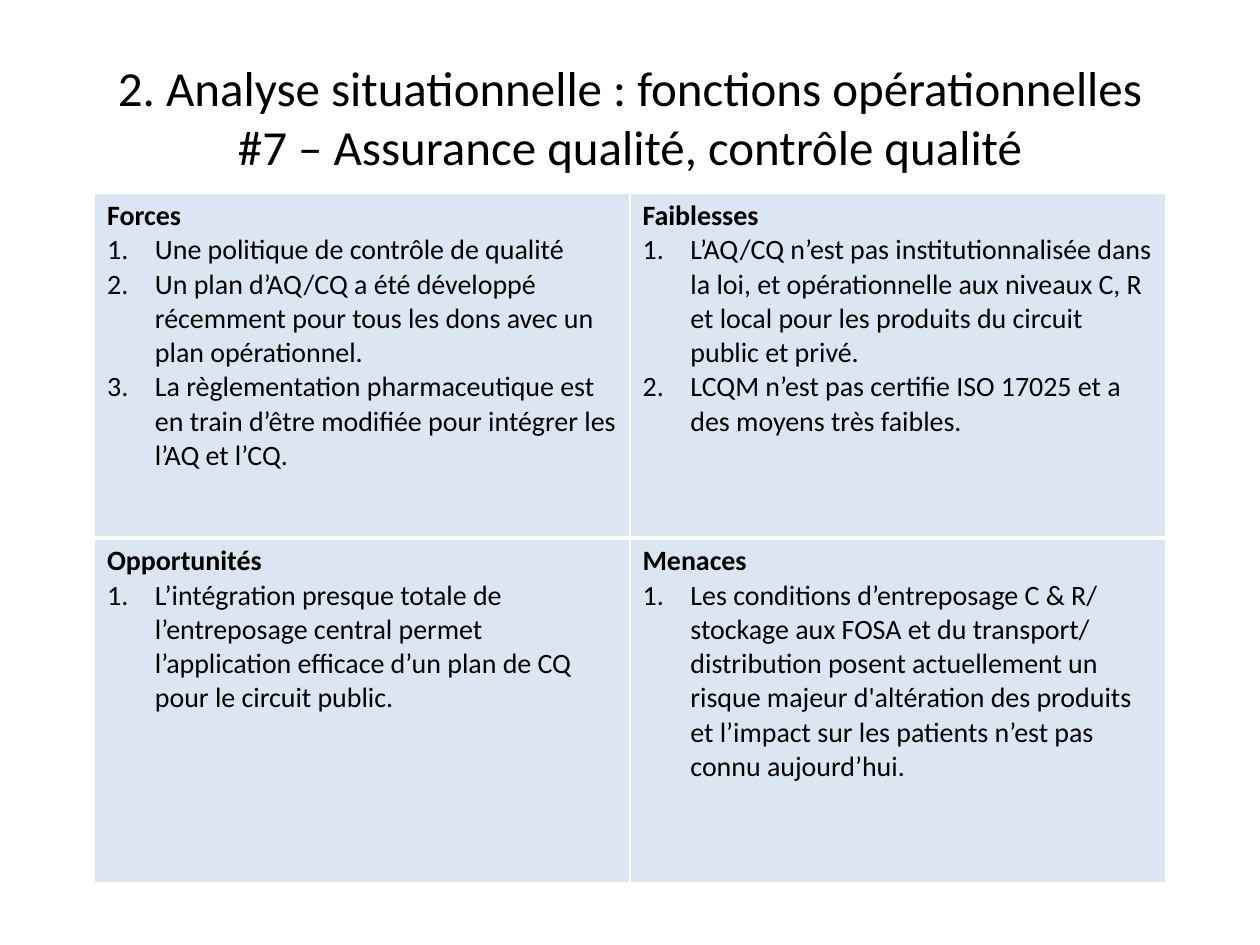
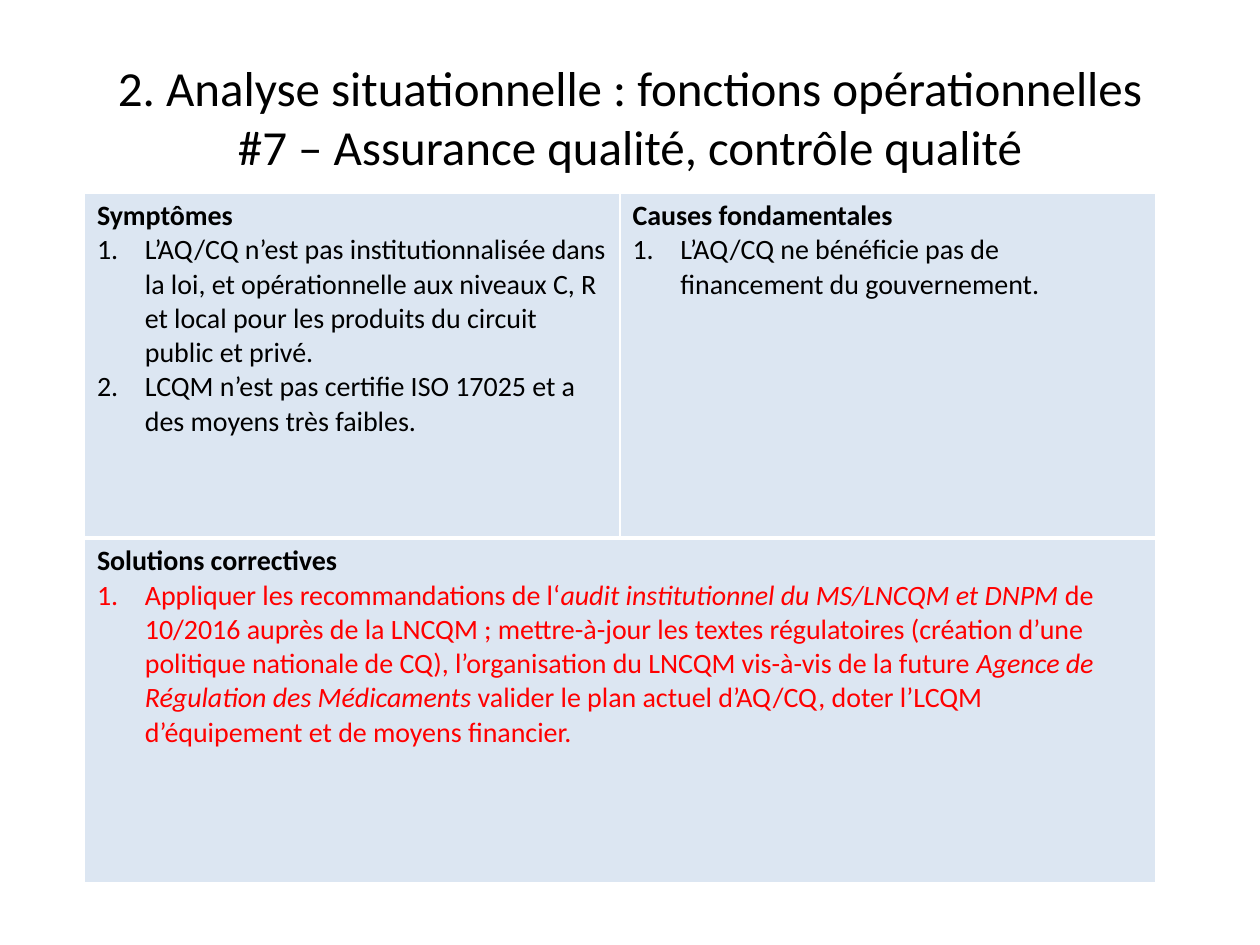
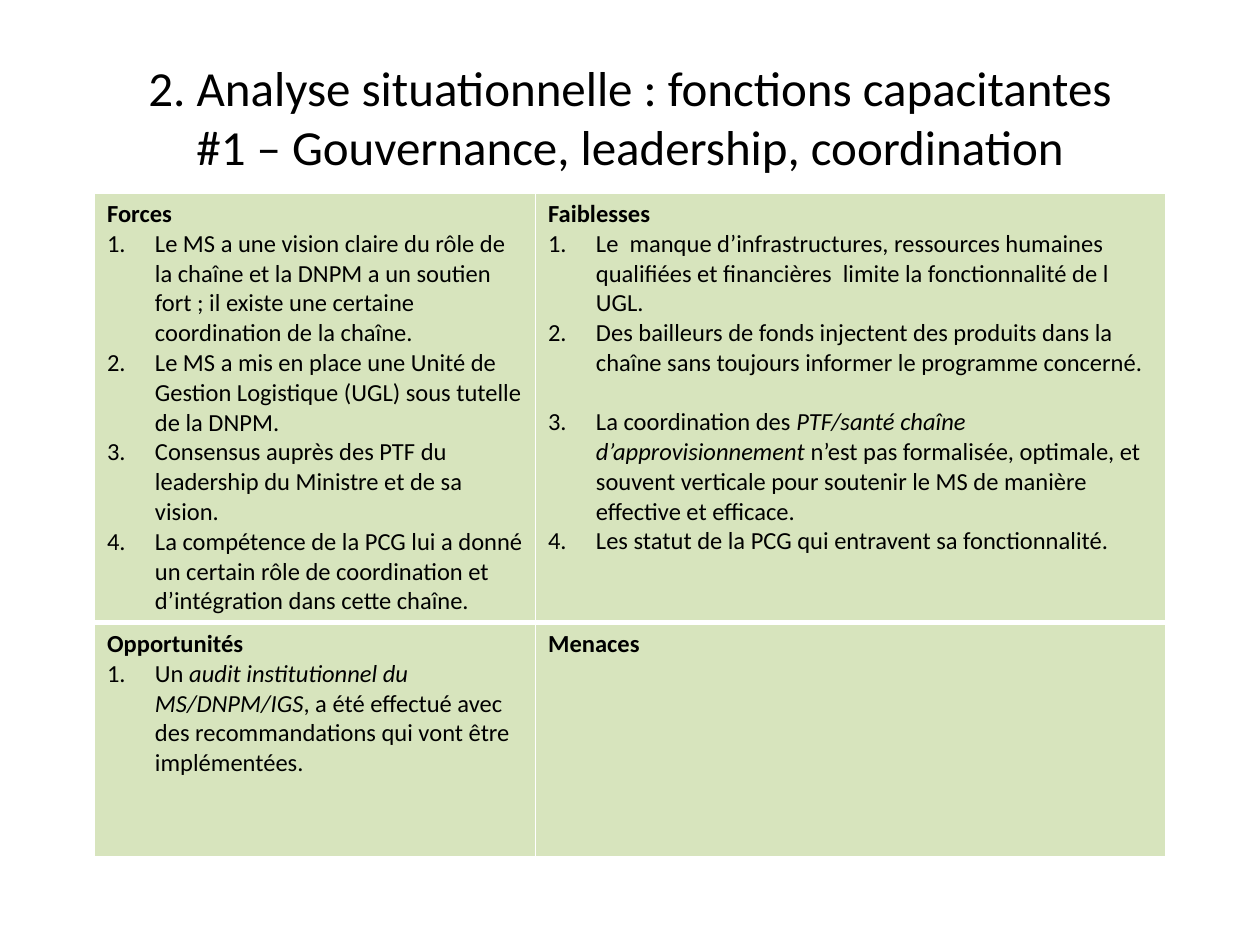
from dataclasses import dataclass

from lxml.etree import SubElement
from pptx import Presentation
from pptx.dml.color import RGBColor as RGB
from pptx.enum.text import MSO_ANCHOR as ANCHOR, MSO_AUTO_SIZE as AUTO, PP_ALIGN as ALIGN
from pptx.oxml.ns import qn
from pptx.util import Inches, Pt


@dataclass(frozen=True)
class Theme:
    """Colours, font and sizes shared by the slides."""
    font: str = "Calibri"
    ink: str = "000000"
    alert: str = "FF0000"
    line: str = "FFFFFF"
    blue: str = "DCE6F2"
    green: str = "D7E4BD"
    title: int = 28
    body: int = 16
    small: int = 14
    thin: int = 1
    thick: int = 3
    indent: float = 0.38


@dataclass(frozen=True)
class Quadrant:
    """A heading with its numbered points; gap_at is the point set apart."""
    heading: str
    points: tuple = ()
    color: str = Theme.ink
    gap_at: int = -1


THEME = Theme()
TITLE_BOX = (0.5, 0.3, 9, 1.25)
QUALITY_TITLE = ("2. Analyse situationnelle : fonctions opérationnelles\n"
                 "#7 – Assurance qualité, contrôle qualité")
GOVERNANCE_TITLE = ("2. Analyse situationnelle : fonctions capacitantes\n"
                    "#1 – Gouvernance, leadership, coordination")
QUALITY_GAPS = (
    "L’AQ/CQ n’est pas institutionnalisée dans la loi, et opérationnelle aux niveaux C, R "
    "et local pour les produits du circuit public et privé.",
    "LCQM n’est pas certifie ISO 17025 et a des moyens très faibles.",
)
QUALITY_SWOT = [
    [Quadrant("Forces", (
        "Une politique de contrôle de qualité",
        "Un plan d’AQ/CQ a été développé récemment pour tous les dons avec un plan opérationnel.",
        "La règlementation pharmaceutique est en train d’être modifiée pour intégrer les "
        "l’AQ et l’CQ.")),
     Quadrant("Faiblesses", QUALITY_GAPS)],
    [Quadrant("Opportunités", (
        "L’intégration presque totale de l’entreposage central permet l’application efficace "
        "d’un plan de CQ pour le circuit public.",)),
     Quadrant("Menaces", (
         "Les conditions d’entreposage C & R/ stockage aux FOSA et du transport/ distribution "
         "posent actuellement un risque majeur d'altération des produits et l’impact sur les "
         "patients n’est pas connu aujourd’hui.",))],
]
QUALITY_CAUSES = [
    [Quadrant("Symptômes", QUALITY_GAPS),
     Quadrant("Causes fondamentales", (
         "L’AQ/CQ ne bénéficie pas de financement du gouvernement.",))],
    [Quadrant("Solutions correctives", (
        "Appliquer les recommandations de l‘*audit institutionnel du MS/LNCQM et DNPM* de "
        "10/2016 auprès de la LNCQM ; mettre-à-jour les textes régulatoires (création d’une "
        "politique nationale de CQ), l’organisation du LNCQM vis-à-vis de la future *Agence de "
        "Régulation des Médicaments* valider le plan actuel d’AQ/CQ, doter l’LCQM "
        "d’équipement et de moyens financier.",), color=THEME.alert)],
]
GOVERNANCE_SWOT = [
    [Quadrant("Forces", (
        "Le MS a une vision claire du rôle de la chaîne et la DNPM a un soutien fort ; "
        "il existe une certaine coordination de la chaîne.",
        "Le MS a mis en place une Unité de Gestion Logistique (UGL) sous tutelle de la DNPM.",
        "Consensus auprès des PTF du leadership du Ministre et de sa vision.",
        "La compétence de la PCG lui a donné un certain rôle de coordination et d’intégration "
        "dans cette chaîne.")),
     Quadrant("Faiblesses", (
         "Le  manque d’infrastructures, ressources humaines qualifiées et financières  limite "
         "la fonctionnalité de l UGL.",
         "Des bailleurs de fonds injectent des produits dans la chaîne sans toujours informer "
         "le programme concerné.",
         "La coordination des* PTF/santé chaîne d’approvisionnement *n’est pas formalisée, "
         "optimale, et souvent verticale pour soutenir le MS de manière effective et efficace.",
         "Les statut de la PCG qui entravent sa fonctionnalité."), gap_at=2)],
    [Quadrant("Opportunités", (
        "Un *audit institutionnel du MS/DNPM/IGS*, a été effectué avec des recommandations "
        "qui vont être implémentées.",)),
     Quadrant("Menaces")],
]


def write(p, text, size=THEME.body, color=THEME.ink, bold=False, align=None, before=0):
    """Fill a paragraph; asterisks enclose italics and newlines break lines."""
    p.alignment = align
    p.space_before = Pt(before)
    for i, part in enumerate(text.split("*")):
        for j, line in enumerate(part.split("\n")):
            if j:
                p.add_line_break()
            r = p.add_run()
            r.text = line
            f = r.font
            f.name, f.size, f.bold, f.italic = THEME.font, Pt(size), bold, i % 2 == 1
            f.color.rgb = RGB.from_string(color)


def number(p):
    """Give a paragraph automatic numbering with a hanging indent."""
    pPr = p._p.get_or_add_pPr()
    indent = Inches(THEME.indent)
    pPr.set("marL", str(indent))
    pPr.set("indent", str(-indent))
    SubElement(pPr, qn("a:buFont"), typeface="+mj-lt")
    SubElement(pPr, qn("a:buAutoNum"), type="arabicPeriod")


def style_cell(cell, fill, top, bottom):
    """Set the four borders and the fill of a table cell."""
    tcPr = cell._tc.get_or_add_tcPr()
    widths = {"lnL": THEME.thin, "lnR": THEME.thin, "lnT": top, "lnB": bottom}
    for tag, width in widths.items():
        ln = SubElement(tcPr, qn(f"a:{tag}"), w=str(Pt(width)))
        SubElement(SubElement(ln, qn("a:solidFill")), qn("a:srgbClr"), val=THEME.line)
    cell.fill.solid()
    cell.fill.fore_color.rgb = RGB.from_string(fill)


def fill_quadrant(cell, quadrant, size):
    """Write a heading and its numbered points in a cell."""
    tf = cell.text_frame
    write(tf.paragraphs[0], quadrant.heading, size=size, bold=True)
    for i, point in enumerate(quadrant.points):
        p = tf.add_paragraph()
        gap = 1.2 * size if i == quadrant.gap_at else 0
        write(p, point, size=size, color=quadrant.color, before=gap)
        number(p)


def add_title(slide, text, box):
    """Place and format the title placeholder in its box."""
    sp = slide.shapes.title
    sp.left, sp.top, sp.width, sp.height = map(Inches, box)
    tf = sp.text_frame
    tf.auto_size, tf.vertical_anchor = AUTO.NONE, ANCHOR.MIDDLE
    write(tf.paragraphs[0], text, size=THEME.title, align=ALIGN.CENTER)


def add_matrix(slide, quadrants, left, top, cols, rows, fill, size):
    """Draw a table of quadrants; a row with one quadrant spans all columns."""
    box = map(Inches, (left, top, sum(cols), sum(rows)))
    table = slide.shapes.add_table(len(rows), len(cols), *box).table
    table.first_row = table.horz_banding = False
    for column, width in zip(table.columns, cols):
        column.width = Inches(width)
    for i, (row, height) in enumerate(zip(table.rows, rows)):
        row.height = Inches(height)
        for cell in row.cells:
            style_cell(cell, fill, THEME.thick if i else THEME.thin,
                       THEME.thin if i else THEME.thick)
        if len(quadrants[i]) == 1:
            table.cell(i, 0).merge(table.cell(i, len(cols) - 1))
        for j, quadrant in enumerate(quadrants[i]):
            fill_quadrant(table.cell(i, j), quadrant, size)


def add_analysis(prs, title, quadrants, left=0.75, top=1.53, cols=(4.25, 4.25),
                 rows=(2.74, 2.74), fill=THEME.blue, size=THEME.body):
    """Add a slide with a title above a matrix of quadrants."""
    slide = prs.slides.add_slide(prs.slide_layouts[5])
    add_title(slide, title, TITLE_BOX)
    add_matrix(slide, quadrants, left, top, cols, rows, fill, size)


def main():
    """Build the presentation and save it."""
    prs = Presentation()
    prs.slide_width, prs.slide_height = Inches(10), Inches(7.5)
    add_analysis(prs, QUALITY_TITLE, QUALITY_SWOT)
    add_analysis(prs, QUALITY_TITLE, QUALITY_CAUSES, left=0.67)
    add_analysis(prs, GOVERNANCE_TITLE, GOVERNANCE_SWOT, cols=(3.5, 5), rows=(3.31, 1.86),
                 fill=THEME.green, size=THEME.small)
    prs.save("out.pptx")


if __name__ == "__main__":
    main()
